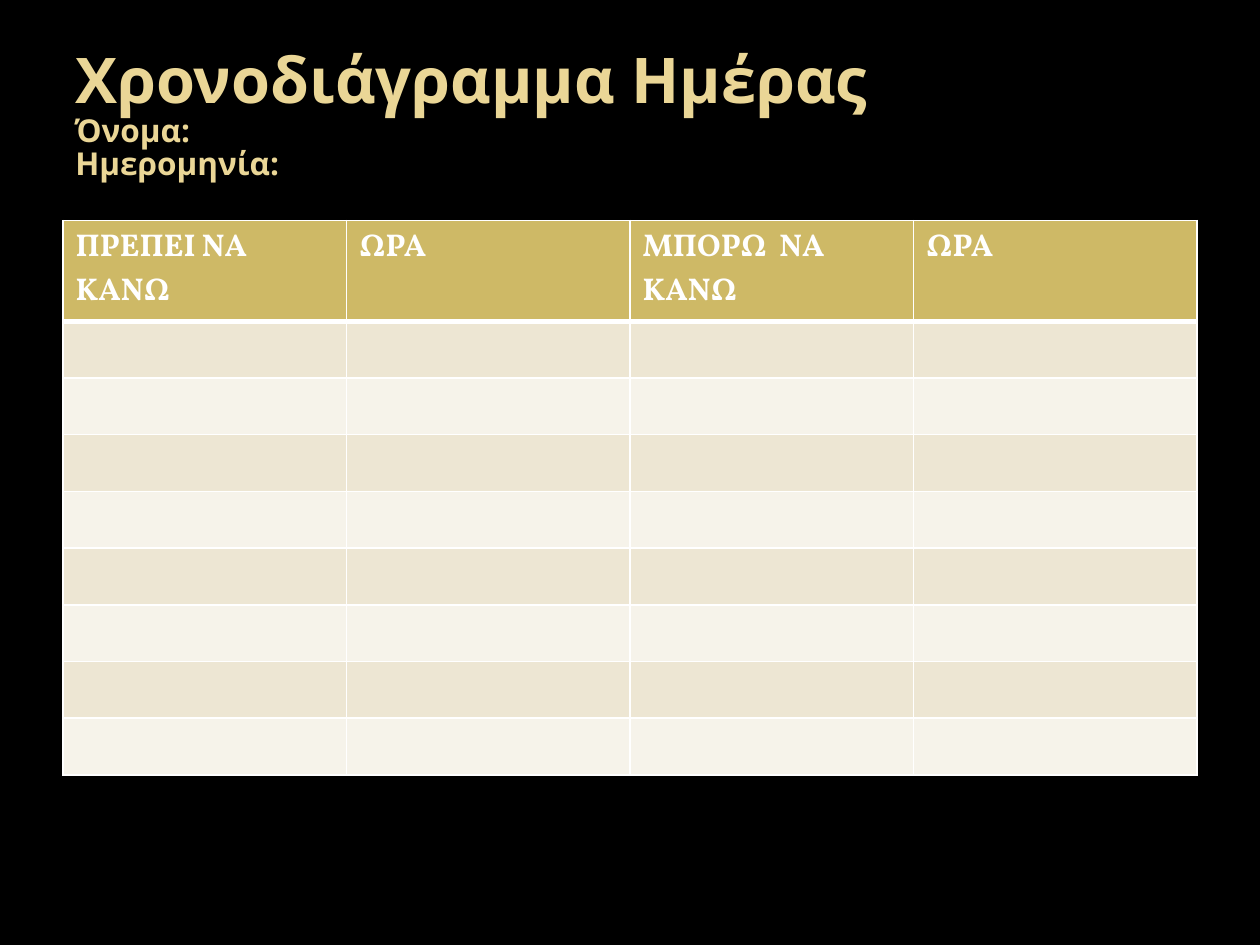
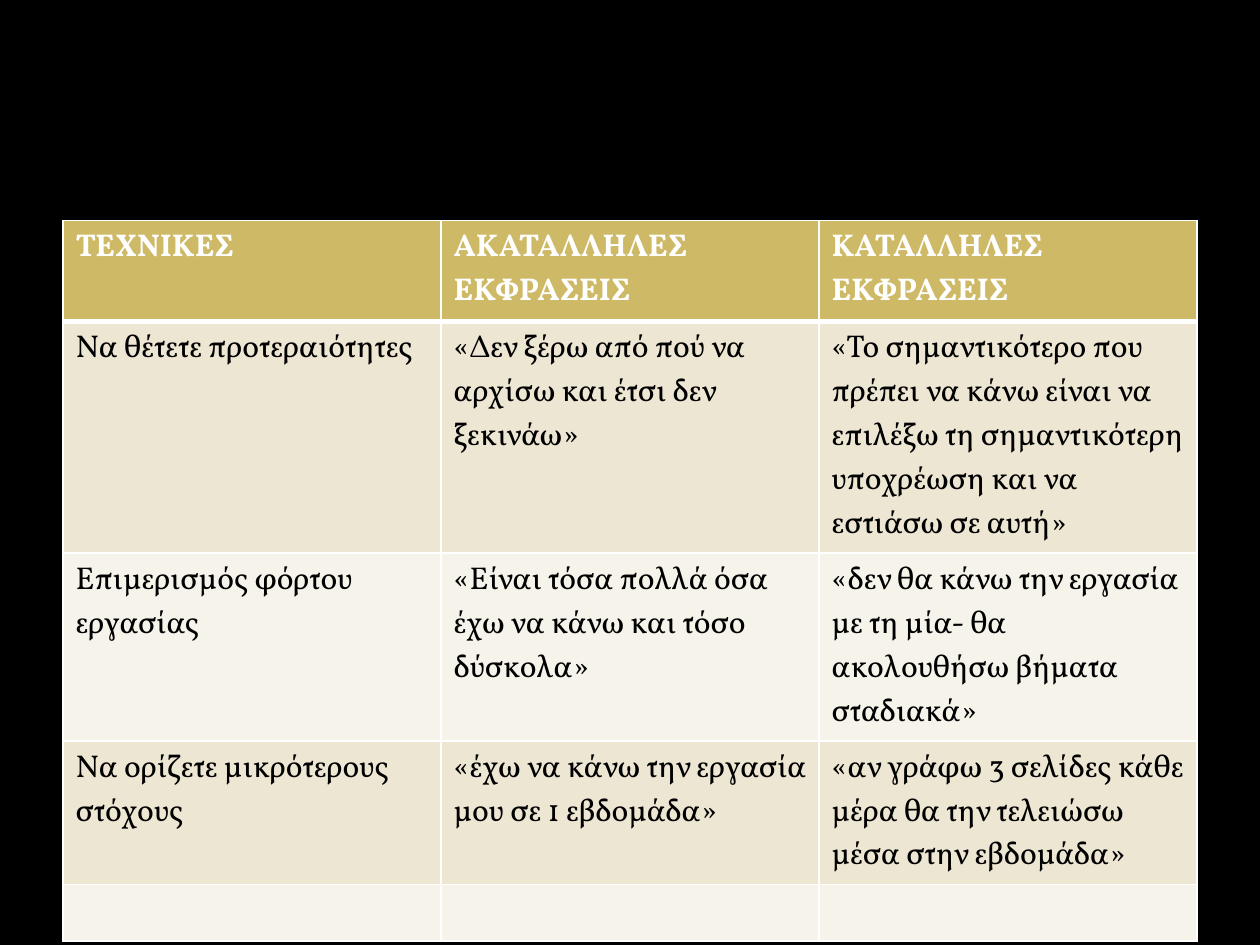
import pptx
import pptx.util
import pptx.oxml
import pptx.dml.color
import pptx.enum.text
import pptx.presentation
import pptx.slide
import pptx.table
import pptx.text.text
from dataclasses import dataclass

Inches = pptx.util.Inches
Pt = pptx.util.Pt
RGBColor = pptx.dml.color.RGBColor

# Shared colours, fonts and places
BLACK = RGBColor(0x00, 0x00, 0x00)
WHITE = RGBColor(0xFF, 0xFF, 0xFF)
CREAM = RGBColor(0xEA, 0xD6, 0x96)
GOLD = RGBColor(0xCE, 0xB9, 0x66)
BANDS = (RGBColor(0xED, 0xE6, 0xD3), RGBColor(0xF6, 0xF3, 0xEA))
LEFT, WIDTH = Inches(0.5), Inches(9)
GRID_TOP = Inches(1.75)
HEAD_HIGH = 0.8
ROW_HIGH = 0.45

TITLE = {"name": "Open Sans", "bold": True}
HEAD = {"name": "Vollkorn", "size": Pt(18), "bold": True}
BODY = {"name": "Vollkorn", "size": Pt(18), "bold": False}


@dataclass
class Grid:
    heads: list[str]
    rows: list[list[str]]
    highs: list[float]


DAY = Grid(
    ["ΠΡΕΠΕΙ ΝΑ ΚΑΝΩ", "ΩΡΑ", "ΜΠΟΡΩ  ΝΑ ΚΑΝΩ", "ΩΡΑ"],
    [[""] * 4 for _ in range(8)],
    [ROW_HIGH] * 8,
)
SKILLS = Grid(
    ["ΤΕΧΝΙΚΕΣ", "ΑΚΑΤΑΛΛΗΛΕΣ ΕΚΦΡΑΣΕΙΣ", "ΚΑΤΑΛΛΗΛΕΣ ΕΚΦΡΑΣΕΙΣ"],
    [
        ["Να θέτετε προτεραιότητες",
         "«Δεν ξέρω από πού να αρχίσω και έτσι δεν ξεκινάω»",
         "«Το σημαντικότερο που πρέπει να κάνω είναι να επιλέξω τη "
         "σημαντικότερη υποχρέωση και να εστιάσω σε αυτή»"],
        ["Επιμερισμός φόρτου εργασίας",
         "«Είναι τόσα πολλά όσα έχω να κάνω και τόσο δύσκολα»",
         "«δεν θα κάνω την εργασία με τη μία- θα ακολουθήσω βήματα σταδιακά»"],
        ["Να ορίζετε μικρότερους στόχους",
         "«έχω να κάνω την εργασία μου σε 1 εβδομάδα»",
         "«αν γράφω 3 σελίδες κάθε μέρα θα την τελειώσω μέσα στην εβδομάδα»"],
        [""] * 3,
    ],
    [1.84, 1.49, 1.14, ROW_HIGH],
)


def style(font: pptx.text.text.Font, form: dict, ink: RGBColor) -> None:
    for key, value in form.items():
        setattr(font, key, value)
    font.color.rgb = ink


def add_page(deck: pptx.presentation.Presentation) -> pptx.slide.Slide:
    page = deck.slides.add_slide(deck.slide_layouts[6])
    page.background.fill.solid()
    page.background.fill.fore_color.rgb = BLACK
    return page


def add_title(page: pptx.slide.Slide, lines: list[tuple[str, int]]) -> None:
    box = page.shapes.add_textbox(LEFT, Inches(0.3), WIDTH, Inches(1.25))
    frame = box.text_frame
    frame.word_wrap = True
    frame.vertical_anchor = pptx.enum.text.MSO_ANCHOR.MIDDLE
    para = frame.paragraphs[0]
    para.line_spacing = 0.86
    for index, (text, size) in enumerate(lines):
        if index:
            para.add_line_break()
        run = para.add_run()
        run.text = text
        style(run.font, TITLE | {"size": Pt(size)}, CREAM)


def add_edges(cell: pptx.table._Cell, row: int) -> None:
    """White rules, thick between the header and the body."""
    props = cell._tc.get_or_add_tcPr()
    thick = {"B": row == 0, "T": row == 1}
    for side in "LRTB":
        wide = Pt(3 if thick.get(side) else 1)
        props.append(pptx.oxml.parse_xml(
            f'<a:ln{side} xmlns:a="http://schemas.openxmlformats.org/drawingml/2006/main"'
            f' w="{wide}"><a:solidFill><a:srgbClr val="{WHITE}"/></a:solidFill></a:ln{side}>'
        ))


def add_grid(page: pptx.slide.Slide, grid: Grid) -> None:
    rows = [grid.heads, *grid.rows]
    highs = [HEAD_HIGH, *grid.highs]
    count = len(grid.heads)
    table = page.shapes.add_table(
        len(rows), count, LEFT, GRID_TOP, WIDTH, Inches(sum(highs))
    ).table
    for col in table.columns:
        col.width = WIDTH // count
    for row, (texts, high) in enumerate(zip(rows, highs)):
        table.rows[row].height = Inches(high)
        for col, text in enumerate(texts):
            cell = table.cell(row, col)
            add_edges(cell, row)
            cell.fill.solid()
            cell.fill.fore_color.rgb = BANDS[(row - 1) % 2] if row else GOLD
            if text:
                run = cell.text_frame.paragraphs[0].add_run()
                run.text = text
                style(run.font, BODY if row else HEAD, BLACK if row else WHITE)


def main() -> None:
    deck = pptx.Presentation()
    deck.slide_width, deck.slide_height = Inches(10), Inches(7.5)

    # Day planner
    page = add_page(deck)
    add_title(page, [("Χρονοδιάγραμμα Ημέρας", 36), ("Όνομα:", 18), ("Ημερομηνία:", 18)])
    add_grid(page, DAY)

    # Techniques and phrases
    add_grid(add_page(deck), SKILLS)

    deck.save("out.pptx")


if __name__ == "__main__":
    main()
